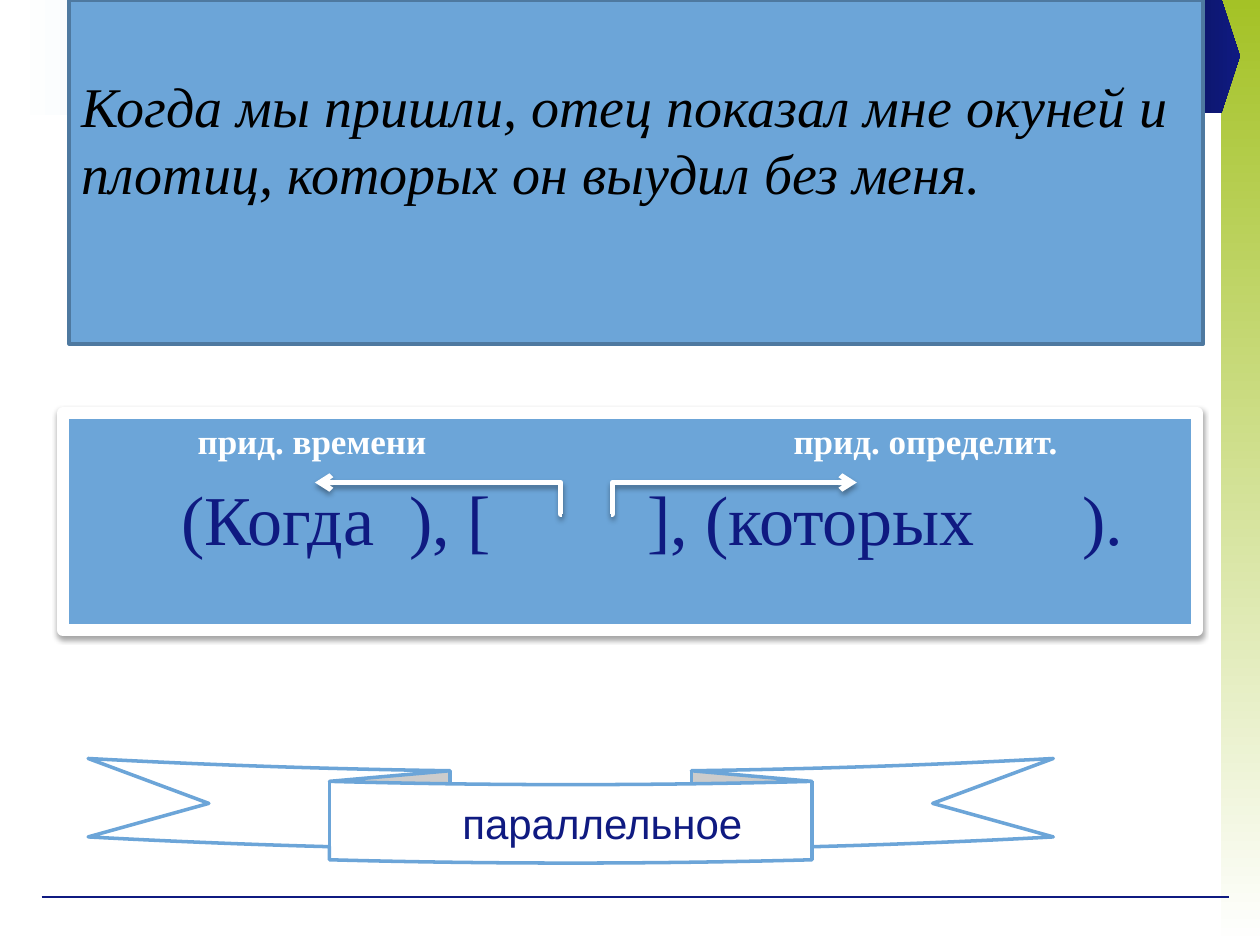
"""Build the slide with a complex sentence, its clause scheme and its type."""
from lxml.etree import SubElement
from pptx import Presentation
from pptx.dml.color import RGBColor
from pptx.enum.shapes import MSO_CONNECTOR as LINE, MSO_SHAPE as SHAPE
from pptx.enum.text import MSO_ANCHOR as ANCHOR, PP_ALIGN as ALIGN
from pptx.oxml import parse_xml
from pptx.oxml.ns import nsdecls, qn
from pptx.util import Inches, Pt

color = RGBColor.from_string
SKY, NAVY, WHITE = "6CA5D8", "0F1A81", "FFFFFF"
SERIF = "Times New Roman"
SOFT_SHADOW = (
    f'<a:effectLst {nsdecls("a")}><a:outerShdw blurRad="39370" dist="22860" dir="5400000">'
    '<a:srgbClr val="000000"><a:alpha val="35000"/></a:srgbClr></a:outerShdw></a:effectLst>'
)

prs = Presentation()
prs.slide_width, prs.slide_height = Inches(10), Inches(7.5)
shapes = prs.slides.add_slide(prs.slide_layouts[6]).shapes


def add_box(kind, left, top, width, height, fill, border=None, border_width=0):
    box = shapes.add_shape(kind, Inches(left), Inches(top), Inches(width), Inches(height))
    box.fill.solid()
    box.fill.fore_color.rgb = color(fill)
    if border:
        box.line.color.rgb = color(border)
        box.line.width = Pt(border_width)
    else:
        box.line.fill.background()
    box.shadow.inherit = False
    return box


def write(paragraph, text, font, size, text_color, bold=False, italic=False):
    paragraph.text = text
    for run in paragraph.runs:
        run.font.name, run.font.size = font, Pt(size)
        run.font.color.rgb = color(text_color)
        run.font.bold, run.font.italic = bold, italic


for kind, left, top, width, height, start, end, angle in [
    (SHAPE.RECTANGLE, 9.69, 0, 0.31, 7.5, "A4C226", WHITE, 270),
    (SHAPE.PENTAGON, 9.25, -0.01, 0.59, 0.91, "0B135C", NAVY, 0),
    (SHAPE.RECTANGLE, 0.12, 0, 8.7, 0.91, WHITE, SKY, 0),
]:
    decor = add_box(kind, left, top, width, height, start)
    if kind == SHAPE.PENTAGON:
        decor.adjustments[0] = 0.25
    decor.fill.gradient()
    decor.fill.gradient_angle = angle
    for stop, stop_color in zip(decor.fill.gradient_stops, (start, end)):
        stop.color.rgb = color(stop_color)

footer_rule = shapes.add_connector(LINE.STRAIGHT, Inches(0.33), Inches(7.12), Inches(9.75), Inches(7.12))
footer_rule.line.color.rgb = color(NAVY)
footer_rule.line.width = Pt(0.75)
SubElement(footer_rule._element.spPr, qn("a:effectLst"))

scheme = add_box(SHAPE.RECTANGLE, 0.5, 3.28, 9, 1.72, SKY, WHITE, 7)
scheme_props = scheme._element.spPr
scheme_props.replace(scheme_props.find(qn("a:effectLst")), parse_xml(SOFT_SHADOW))
scheme_text = scheme.text_frame
scheme_text.vertical_anchor = ANCHOR.TOP
for index, (text, size, text_color, bold, space, tabs) in enumerate([
    ("\tприд. времени\tприд. определит.", 20, WHITE, True, 4, (0.97, 5.7)),
    ("\t(Когда\t), [\t], (которых\t).", 40, NAVY, False, 8, (0.84, 2.65, 4.54, 7.99)),
]):
    line = scheme_text.add_paragraph() if index else scheme_text.paragraphs[0]
    write(line, text, SERIF, size, text_color, bold)
    line.alignment = ALIGN.LEFT
    line.space_before = Pt(space)
    tab_list = SubElement(line._p.get_or_add_pPr(), qn("a:tabLst"))
    for tab in tabs:
        SubElement(tab_list, qn("a:tab"), pos=str(Inches(tab)), algn="l")

sentence = add_box(SHAPE.RECTANGLE, 0.55, 0, 9, 2.73, SKY, "4E79A0", 2)
sentence.text_frame.vertical_anchor = ANCHOR.MIDDLE
sentence.text_frame.margin_bottom = Inches(0.58)
sentence_line = sentence.text_frame.paragraphs[0]
write(sentence_line, "Когда мы пришли, отец показал мне окуней и плотиц, которых он выудил без меня.",
      SERIF, 32, "000000", italic=True)
sentence_line.alignment = ALIGN.LEFT

ribbon = add_box(SHAPE.CURVED_DOWN_RIBBON, 0.7, 6.02, 7.66, 0.83, WHITE, SKY, 2)
ribbon.text_frame.margin_left = Inches(0.6)
ribbon.text_frame.vertical_anchor = ANCHOR.MIDDLE
write(ribbon.text_frame.paragraphs[0], "параллельное", "Arial", 24, NAVY)
ribbon.text_frame.paragraphs[0].alignment = ALIGN.CENTER

for start_x, end_x in [(4.85, 6.8), (4.46, 2.5)]:
    arrow = shapes.add_connector(LINE.ELBOW, Inches(start_x), Inches(4.08), Inches(end_x), Inches(3.83))
    arrow.line.color.rgb = color(WHITE)
    arrow.line.width = Pt(3)
    SubElement(arrow.line._get_or_add_ln(), qn("a:tailEnd"), type="arrow")
    arrow_props = arrow._element.spPr
    bend = arrow_props.find(qn("a:prstGeom")).find(qn("a:avLst"))
    SubElement(bend, qn("a:gd"), name="adj1", fmla="val 500")
    arrow_props.append(parse_xml(SOFT_SHADOW))

prs.save("out.pptx")
